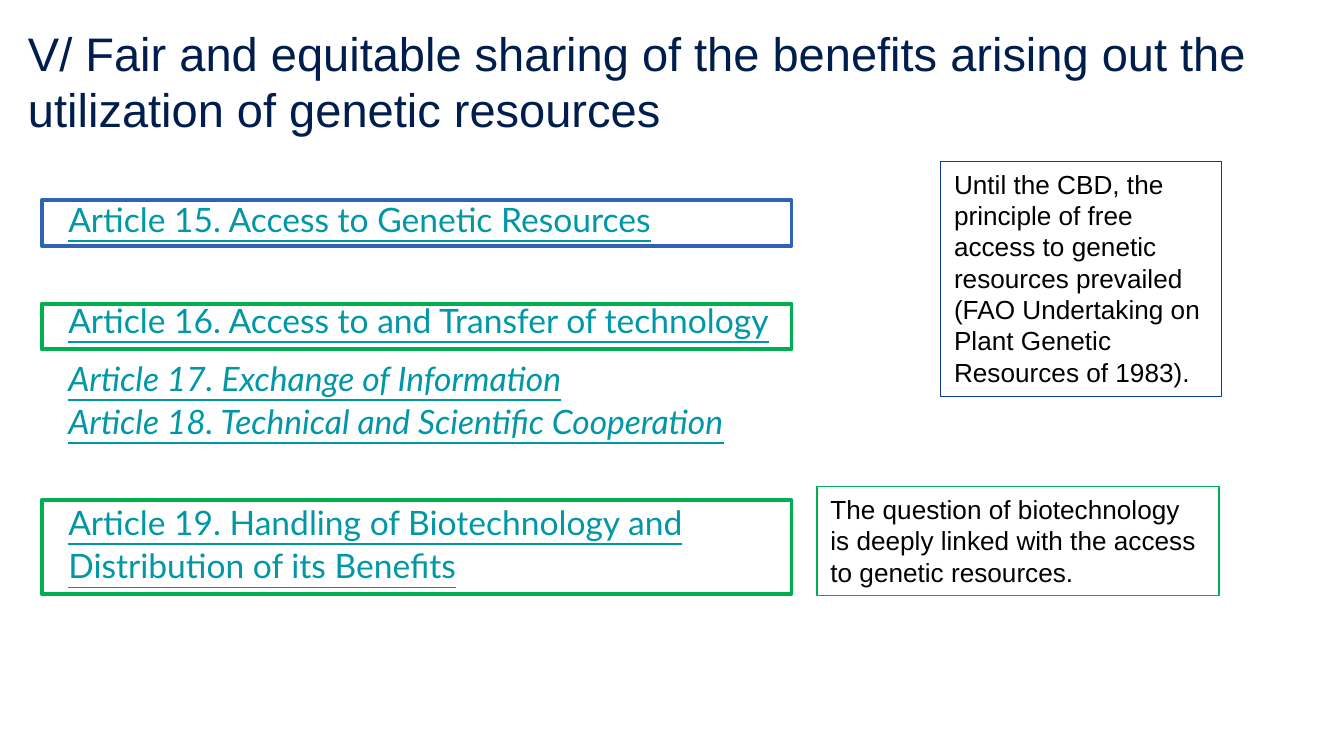
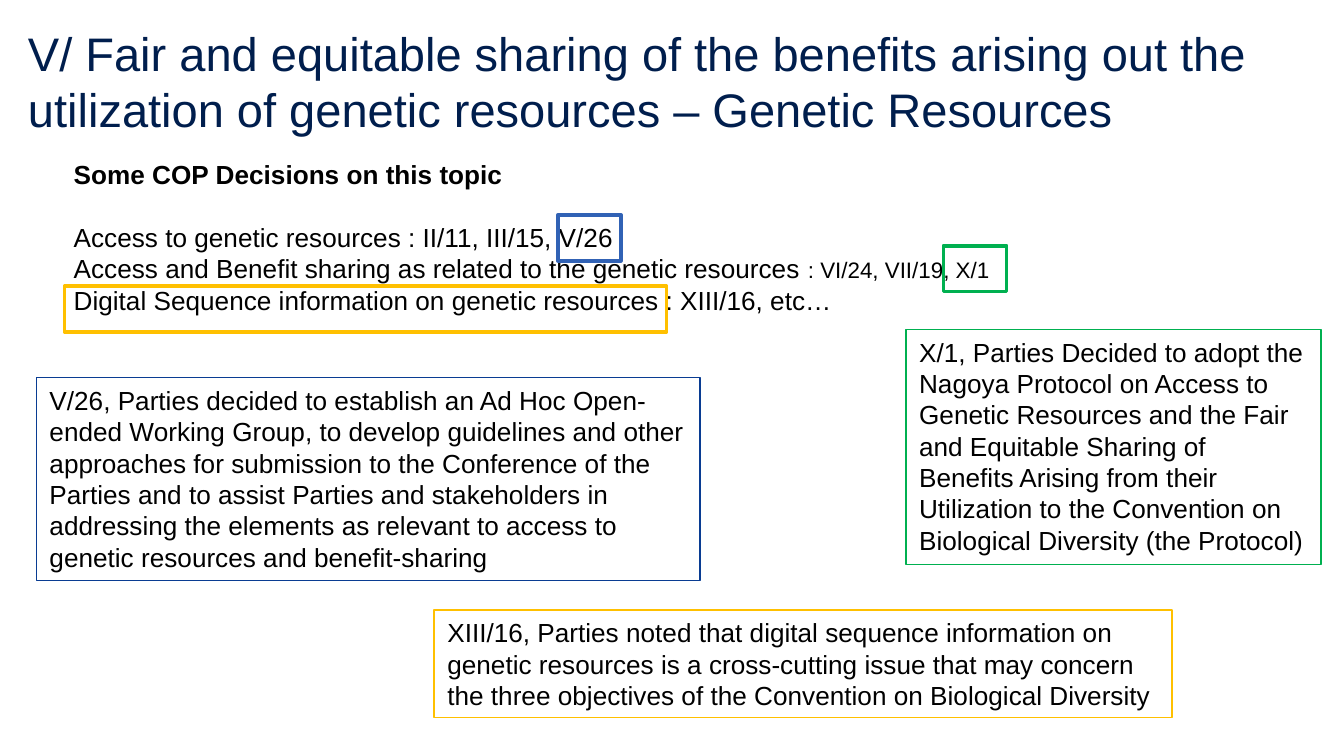
from pptx import Presentation
from pptx import util as u
from pptx.dml.color import RGBColor
from pptx.enum import shapes, text

NAVY = RGBColor(0x00, 0x1E, 0x4D)
TEAL = RGBColor(0x00, 0x97, 0xA7)
BLACK = RGBColor(0x00, 0x00, 0x00)
BLUE = RGBColor(0x31, 0x62, 0xB5)
DEEP = RGBColor(0x09, 0x3C, 0x92)
GREEN = RGBColor(0x00, 0xB0, 0x50)
GOLD = RGBColor(0xFF, 0xC0, 0x00)
UNIT = u.Inches(0.1)
WIDE, HIGH = 100, 56.25
TITLE = "V/ Fair and equitable sharing of the benefits arising out the utilization of genetic resources"


def grid(*cells):
    """Turn columns and rows of the grid into lengths."""
    return [round(c * UNIT) for c in cells]


def run(para, words, size, color=BLACK, face="Arial", bold=False, ital=False, under=False):
    """Add one styled run to a paragraph."""
    part = para.add_run()
    part.text = words
    font = part.font
    font.name, font.size, font.color.rgb = face, u.Pt(size), color
    font.bold, font.italic, font.underline = bold, ital, under


def setup(frame, side=0.1, top=0.05):
    """Make a frame wrap, start at its top and keep its margins."""
    frame.word_wrap = True
    frame.auto_size = text.MSO_AUTO_SIZE.NONE
    frame.vertical_anchor = text.MSO_ANCHOR.TOP
    frame.margin_left = frame.margin_right = u.Inches(side)
    frame.margin_top = frame.margin_bottom = u.Inches(top)
    return frame


def block(slide, cells, **edges):
    """Add a text box and return its frame."""
    return setup(slide.shapes.add_textbox(*grid(*cells)).text_frame, **edges)


def paras(frame, count):
    """Yield the wanted number of left-aligned paragraphs."""
    for i in range(count):
        para = frame.add_paragraph() if i else frame.paragraphs[0]
        para.alignment = text.PP_ALIGN.LEFT
        yield para


def page(deck, title):
    """Add a blank slide with its title."""
    slide = deck.slides.add_slide(deck.slide_layouts[6])
    frame = block(slide, (1.1, 0.6, 93.2, 6.3), top=0.12)
    run(next(paras(frame, 1)), title, 25.2, NAVY)
    return slide


def box(slide, cells, color, width=2):
    """Outline a region of the slide."""
    rect = slide.shapes.add_shape(shapes.MSO_SHAPE.RECTANGLE, *grid(*cells))
    rect.shadow.inherit = False
    rect.fill.background()
    rect.line.color.rgb = color
    rect.line.width = u.Pt(width)
    return rect


def note(slide, cells, color, words):
    """Add a thinly framed note."""
    frame = setup(box(slide, cells, color, 0.75).text_frame)
    run(next(paras(frame, 1)), words, 14)


def treaty(deck):
    """Build the slide that lists the articles."""
    slide = page(deck, TITLE)
    lines = [
        ("Article 15. Access to Genetic Resources", False, 31),
        ("Article 16. Access to and Transfer of technology", False, 8),
        ("Article 17. Exchange of Information", True, 0),
        ("Article 18. Technical and Scientific Cooperation", True, 31),
        ("Article 19. Handling of Biotechnology and Distribution of its Benefits", False, 0),
    ]
    frame = block(slide, (4.1, 14.1, 55.8, 33.9))
    for para, (words, ital, gap) in zip(paras(frame, len(lines)), lines):
        para.line_spacing = 1.07
        para.space_after = u.Pt(gap)
        run(para, words, 18, TEAL, "Lato", ital=ital, under=True)
    for top, high, color in [(14.9, 3.4, BLUE), (22.6, 3.4, GREEN), (37.2, 7, GREEN)]:
        box(slide, (3.1, top, 55.8, high), color)
    note(slide, (70, 12, 20.9, 17.5), DEEP,
         "Until the CBD, the principle of free access to genetic resources prevailed "
         "(FAO Undertaking on Plant Genetic Resources of 1983).")
    note(slide, (60.8, 36.2, 29.9, 8.1), GREEN,
         "The question of biotechnology is deeply linked with the access to genetic resources.")


def rulings(deck):
    """Build the slide on the COP decisions."""
    slide = page(deck, TITLE + " – Genetic Resources")
    lines = [
        [("Some COP Decisions on this topic", 14)],
        [("Access to genetic resources : II/11, III/15, V/26", 14)],
        [("Access and Benefit sharing as related to the genetic resources ", 14),
         (": VI/24, VII/19, X/1", 12)],
        [("Digital Sequence information on genetic resources : XIII/16, etc…", 14)],
    ]
    frame = block(slide, (4.5, 11.3, 95.7, 12.8))
    for i, para in enumerate(paras(frame, len(lines))):
        para.space_after = u.Pt(0 if i else 16.8)
        for words, size in lines[i]:
            run(para, words, size, bold=not i)
    for left, top, wide, color in [(70.2, 18.3, 4.7, GREEN), (41.5, 16, 4.7, BLUE),
                                   (4.8, 21.3, 44.8, GOLD)]:
        box(slide, (left, top, wide, 3.4), color)
    note(slide, (2.7, 28.1, 49.4, 15.1), DEEP,
         "V/26, Parties decided to establish an Ad Hoc Open-ended Working Group, to develop "
         "guidelines and other approaches for submission to the Conference of the Parties and "
         "to assist Parties and stakeholders in addressing the elements as relevant to access "
         "to genetic resources and benefit-sharing")
    note(slide, (67.4, 24.5, 30.9, 17.5), GREEN,
         "X/1, Parties Decided to adopt the Nagoya Protocol on Access to Genetic Resources and "
         "the Fair and Equitable Sharing of Benefits Arising from their Utilization to the "
         "Convention on Biological Diversity (the Protocol)")
    note(slide, (32.3, 45.4, 54.9, 8), GOLD,
         "XIII/16, Parties noted that digital sequence information on genetic resources is a "
         "cross-cutting issue that may concern the three objectives of the Convention on "
         "Biological Diversity")


def main():
    """Build and save the deck."""
    deck = Presentation()
    deck.slide_width, deck.slide_height = grid(WIDE, HIGH)
    treaty(deck)
    rulings(deck)
    deck.save("out.pptx")


if __name__ == "__main__":
    main()
